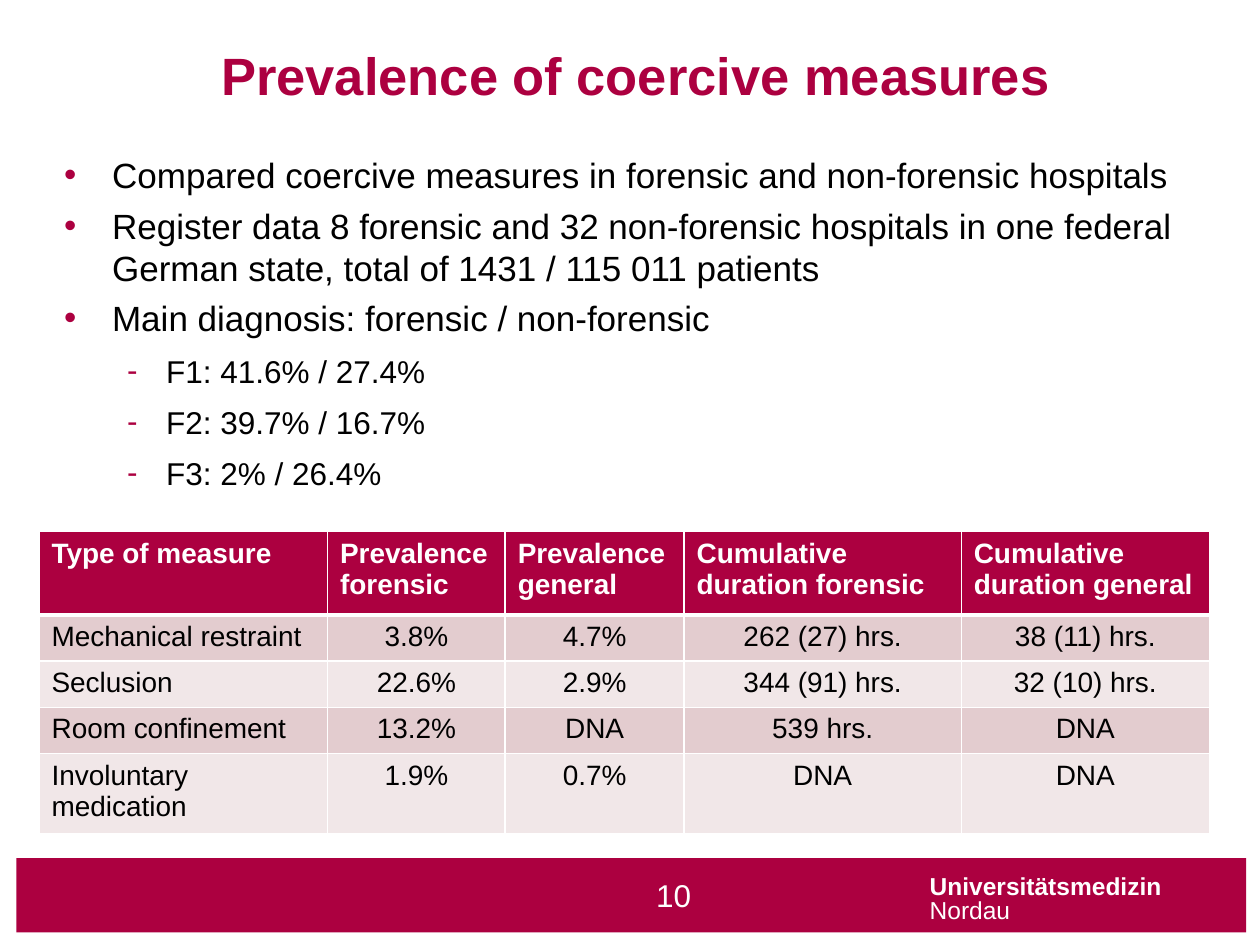
from dataclasses import dataclass
from typing import NamedTuple

from lxml.etree import SubElement
from pptx import Presentation
from pptx.dml.color import RGBColor
from pptx.enum.shapes import MSO_SHAPE
from pptx.enum.text import MSO_ANCHOR, PP_ALIGN
from pptx.oxml.ns import qn
from pptx.util import Emu, Inches, Pt

SLIDE_WIDTH, SLIDE_HEIGHT = Inches(10), Inches(7.5)


@dataclass(frozen=True)
class Theme:
    font: str = "Arial"
    accent: str = "AC0040"
    white: str = "FFFFFF"
    black: str = "000000"
    bands: tuple = ("E3CCCF", "F1E7E8")
    title: int = 30
    body: int = 20
    detail: int = 18
    table: int = 16
    brand: int = 14


THEME = Theme()


class Box(NamedTuple):
    """Left, top, width and height in percent of the slide's size."""
    left: float
    top: float
    width: float
    height: float

    def lengths(self) -> list:
        sides = (SLIDE_WIDTH, SLIDE_HEIGHT) * 2
        return [Emu(round(side * share / 100)) for side, share in zip(sides, self)]


class BulletLevel(NamedTuple):
    mark: str
    size: int
    indent: float
    hanging: float
    space_before: float
    line_spacing: float


MAIN = BulletLevel("•", THEME.body, 0.38, 0.38, 4.8, 1.0)
SUB = BulletLevel("-", THEME.detail, 0.81, 0.31, 5.4, 1.1)

BULLETS = [
    (MAIN, "Compared coercive measures in forensic and non-forensic hospitals"),
    (MAIN, "Register data 8 forensic and 32 non-forensic hospitals in one federal "
           "German state, total of 1431 / 115 011 patients"),
    (MAIN, "Main diagnosis: forensic / non-forensic"),
    (SUB, "F1: 41.6% / 27.4%"),
    (SUB, "F2: 39.7% / 16.7%"),
    (SUB, "F3: 2% / 26.4%"),
]

MEASURES = [
    ["Type of measure", "Prevalence forensic", "Prevalence general",
     "Cumulative duration forensic", "Cumulative duration general"],
    ["Mechanical restraint", "3.8%", "4.7%", "262 (27) hrs.", "38 (11) hrs."],
    ["Seclusion", "22.6%", "2.9%", "344 (91) hrs.", "32 (10) hrs."],
    ["Room confinement", "13.2%", "DNA", "539 hrs.", "DNA"],
    ["Involuntary medication", "1.9%", "0.7%", "DNA", "DNA"],
]
COLUMN_WIDTHS = [2.29, 1.41, 1.42, 2.2, 1.97]
ROW_HEIGHTS = [0.66, 0.35, 0.35, 0.35, 0.53]


def add_run(paragraph, text: str, *, size: int, color: str = THEME.black,
            bold: bool = False) -> None:
    run = paragraph.add_run()
    run.text = text
    run.font.name, run.font.size, run.font.bold = THEME.font, Pt(size), bold
    run.font.color.rgb = RGBColor.from_string(color)


def add_text_frame(slide, box: Box, *, padded: bool = True):
    frame = slide.shapes.add_textbox(*box.lengths()).text_frame
    frame.word_wrap = True
    if not padded:
        frame.margin_left = frame.margin_right = 0
        frame.margin_top = frame.margin_bottom = 0
    return frame


def add_title(slide, box: Box, text: str) -> None:
    frame = add_text_frame(slide, box, padded=False)
    frame.vertical_anchor = MSO_ANCHOR.MIDDLE
    paragraph = frame.paragraphs[0]
    paragraph.alignment = PP_ALIGN.CENTER
    add_run(paragraph, text, size=THEME.title, color=THEME.accent, bold=True)


def set_bullet(paragraph, level: BulletLevel) -> None:
    paragraph.space_before = Pt(level.space_before)
    paragraph.line_spacing = level.line_spacing
    properties = paragraph._p.get_or_add_pPr()
    properties.set("marL", str(Inches(level.indent)))
    properties.set("indent", str(-Inches(level.hanging)))
    color = SubElement(properties, qn("a:buClr"))
    SubElement(color, qn("a:srgbClr"), val=THEME.accent)
    SubElement(properties, qn("a:buFont"), typeface=THEME.font)
    SubElement(properties, qn("a:buChar"), char=level.mark)


def add_bullets(slide, box: Box, bullets: list) -> None:
    frame = add_text_frame(slide, box, padded=False)
    for index, (level, text) in enumerate(bullets):
        paragraph = frame.add_paragraph() if index else frame.paragraphs[0]
        paragraph.level = int(level is SUB)
        set_bullet(paragraph, level)
        add_run(paragraph, text, size=level.size)


def set_borders(cell, *, bottom: float) -> None:
    """Draw white borders, placed before the fill as the schema asks."""
    properties = cell._tc.get_or_add_tcPr()
    widths = {"a:lnL": 1, "a:lnR": 1, "a:lnT": 1, "a:lnB": bottom}
    for position, (tag, width) in enumerate(widths.items()):
        line = SubElement(properties, qn(tag), w=str(Pt(width)))
        fill = SubElement(line, qn("a:solidFill"))
        SubElement(fill, qn("a:srgbClr"), val=THEME.white)
        properties.insert(position, line)


def fill_cell(cell, text: str, row: int, column: int) -> None:
    header = row == 0
    cell.fill.solid()
    cell.fill.fore_color.rgb = RGBColor.from_string(
        THEME.accent if header else THEME.bands[(row - 1) % 2])
    paragraph = cell.text_frame.paragraphs[0]
    paragraph.alignment = PP_ALIGN.LEFT if header or column == 0 else PP_ALIGN.CENTER
    add_run(paragraph, text, size=THEME.table, bold=header,
            color=THEME.white if header else THEME.black)
    set_borders(cell, bottom=3 if header else 1)


def add_measure_table(slide, box: Box) -> None:
    table = slide.shapes.add_table(
        len(MEASURES), len(COLUMN_WIDTHS), *box.lengths()).table
    for column, width in zip(table.columns, COLUMN_WIDTHS):
        column.width = Inches(width)
    for row, height in zip(table.rows, ROW_HEIGHTS):
        row.height = Inches(height)
    for row, texts in enumerate(MEASURES):
        for column, text in enumerate(texts):
            fill_cell(table.cell(row, column), text, row, column)


def add_footer(slide) -> None:
    band = slide.shapes.add_shape(
        MSO_SHAPE.RECTANGLE, *Box(1.3, 90.8, 97.6, 7.87).lengths())
    band.shadow.inherit = False
    band.fill.solid()
    band.fill.fore_color.rgb = RGBColor.from_string(THEME.accent)
    band.line.fill.background()

    paragraph = add_text_frame(slide, Box(72.8, 92.13, 21.2, 6.27)).paragraphs[0]
    paragraph.line_spacing = 0.8
    add_run(paragraph, "Universitätsmedizin", size=THEME.brand,
            color=THEME.white, bold=True)
    paragraph.add_line_break()
    add_run(paragraph, "Nordau", size=THEME.brand, color=THEME.white)

    number = add_text_frame(slide, Box(51.1, 92, 23.3, 5.33)).paragraphs[0]
    add_run(number, "10", size=THEME.detail, color=THEME.white)


def main() -> None:
    presentation = Presentation()
    presentation.slide_width, presentation.slide_height = SLIDE_WIDTH, SLIDE_HEIGHT
    slide = presentation.slides.add_slide(presentation.slide_layouts[6])
    add_footer(slide)
    add_title(slide, Box(8.3, 4.8, 84.3, 6.27), "Prevalence of coercive measures")
    add_bullets(slide, Box(5.1, 16.27, 89, 60), BULLETS)
    add_measure_table(slide, Box(3.1, 56.27, 92.9, 32))
    presentation.save("out.pptx")


if __name__ == "__main__":
    main()
